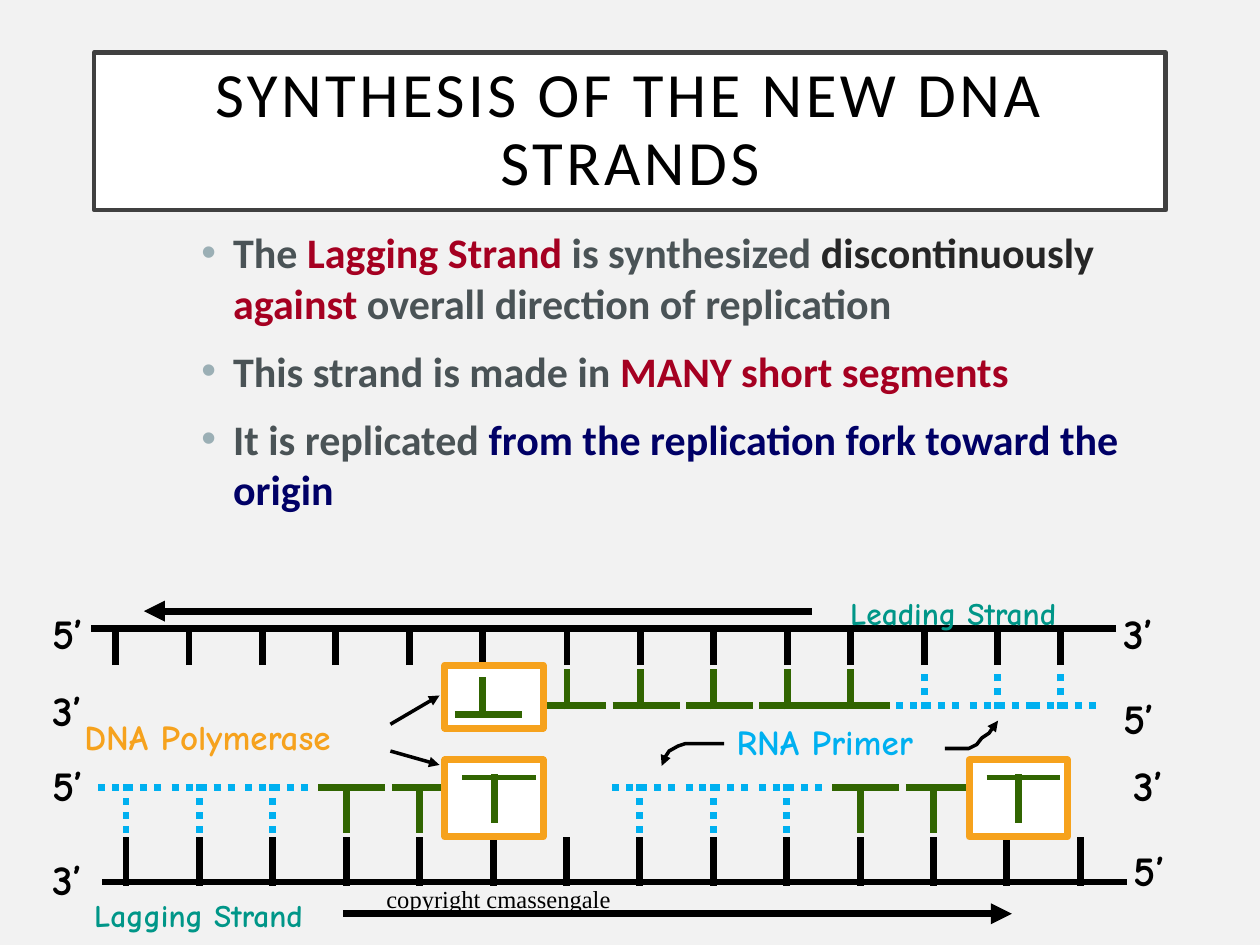
from lxml.etree import SubElement
from pptx import Presentation
from pptx.dml.color import RGBColor
from pptx.enum.dml import MSO_LINE
from pptx.enum.shapes import MSO_CONNECTOR, MSO_SHAPE
from pptx.enum.text import MSO_ANCHOR, MSO_AUTO_SIZE, PP_ALIGN
from pptx.oxml.ns import qn
from pptx.util import Cm, Pt

COLORS = {
    "background": "F2F2F2", "white": "FFFFFF", "black": "000000",
    "frame": "404040", "body": "4A5356", "bullet": "9BAFB5",
    "red": "A50021", "dark": "262626", "navy": "000066",
    "primer": "00B0F0", "new_strand": "316501",
    "polymerase": "F6A21D", "strand_label": "009688",
}
STEP = 1.48
TITLE = "SYNTHESIS OF THE NEW DNA STRANDS"
BULLETS = [
    [("The ", "body"), ("Lagging Strand", "red"), (" is synthesized ", "body"),
     ("discontinuously ", "dark"), ("against", "red"),
     (" overall direction of replication", "body")],
    [("This strand is made in ", "body"), ("MANY short segments", "red")],
    [("It is replicated ", "body"),
     ("from the replication fork toward the origin", "navy")],
]


def color(name):
    return RGBColor.from_string(COLORS[name])


def format_run(run, font, size, color_name, bold=False):
    run.font.name = font
    run.font.size = Pt(size)
    run.font.bold = bold
    run.font.color.rgb = color(color_name)


def format_line(shape, color_name, width, dash=None, arrow=None):
    shape.line.color.rgb = color(color_name)
    shape.line.width = Pt(width)
    if dash:
        shape.line.dash_style = dash
    if arrow:
        SubElement(shape._element.spPr.find(qn("a:ln")), qn(f"a:{arrow}End"), type="triangle")


def add_line(shapes, start, end, color_name="black", width=4, dash=None, arrow=None):
    points = [Cm(value) for value in (*start, *end)]
    connector = shapes.add_connector(MSO_CONNECTOR.STRAIGHT, *points)
    format_line(connector, color_name, width, dash, arrow)
    SubElement(connector._element.spPr, qn("a:effectLst"))


def add_curve(shapes, points, arrow):
    (start_x, start_y), *rest = [(Cm(x), Cm(y)) for x, y in points]
    builder = shapes.build_freeform(start_x, start_y)
    builder.add_line_segments(rest, close=False)
    curve = builder.convert_to_shape()
    curve.shadow.inherit = False
    curve.fill.background()
    format_line(curve, "black", 2, arrow=arrow)


def add_box(shapes, left, top, width, height, line_color, line_width):
    box = shapes.add_shape(MSO_SHAPE.RECTANGLE, Cm(left), Cm(top), Cm(width), Cm(height))
    box.shadow.inherit = False
    box.fill.solid()
    box.fill.fore_color.rgb = color("white")
    format_line(box, line_color, line_width)
    return box


def add_label(shapes, text, left, top, width, height, size, color_name):
    label = shapes.add_textbox(Cm(left), Cm(top), Cm(width), Cm(height))
    label.text_frame.text = text
    label.text_frame.word_wrap = False
    label.text_frame.auto_size = MSO_AUTO_SIZE.SHAPE_TO_FIT_TEXT
    format_run(label.text_frame.paragraphs[0].runs[0], "Comic Neue", size, color_name, True)


def add_end_label(shapes, text, left, top):
    add_label(shapes, text, left, top, 1.22, 1.27, 24, "black")


def add_ticks(shapes, positions, top, bottom):
    for x in positions:
        add_line(shapes, (x, bottom), (x, top))


def add_nucleotides(shapes, positions, top, bottom, bar, color_name, dash=None):
    for x in positions:
        add_line(shapes, (x, bottom), (x, top), color_name, dash=dash)
        add_line(shapes, (x - 0.56, bar), (x + 0.79, bar), color_name, dash=dash)


def add_title(shapes):
    box = add_box(shapes, 1.9, 1.06, 21.6, 3.18, "frame", 2.5)
    frame = box.text_frame
    frame.text = TITLE
    frame.word_wrap = True
    frame.vertical_anchor = MSO_ANCHOR.MIDDLE
    paragraph = frame.paragraphs[0]
    paragraph.alignment = PP_ALIGN.CENTER
    paragraph.line_spacing = 0.9
    run = paragraph.runs[0]
    format_run(run, "Calibri", 36, "black")
    run.font._element.set("spc", "200")


def add_bullet(paragraph):
    properties = paragraph._p.get_or_add_pPr()
    properties.set("marL", str(Cm(0.64)))
    properties.set("indent", str(-Cm(0.64)))
    bullet_color = SubElement(properties, qn("a:buClr"))
    SubElement(bullet_color, qn("a:srgbClr"), val=COLORS["bullet"])
    SubElement(properties, qn("a:buFont"), typeface="Arial")
    SubElement(properties, qn("a:buChar"), char="•")


def add_body(shapes):
    frame = shapes.add_textbox(Cm(3.81), Cm(4.45), Cm(20.52), Cm(11.43)).text_frame
    frame.word_wrap = True
    for index, parts in enumerate(BULLETS):
        paragraph = frame.add_paragraph() if index else frame.paragraphs[0]
        paragraph.space_before = Pt(10)
        add_bullet(paragraph)
        for text, color_name in parts:
            run = paragraph.add_run()
            run.text = text
            format_run(run, "Calibri", 24, color_name, True)


def add_leading_strand(shapes):
    ticks = [start + STEP * index
             for start, count in ((2.33, 6), (11.43, 4), (17.15, 3), (21.38, 1))
             for index in range(count)]
    add_line(shapes, (22.5, 12.67), (1.83, 12.67))
    add_ticks(shapes, ticks, 12.6, 13.41)
    add_line(shapes, (16.36, 12.32), (2.9, 12.32), arrow="tail")
    add_label(shapes, "Leading Strand", 16.89, 11.86, 5.16, 1.02, 18, "strand_label")
    add_nucleotides(shapes, ticks[6:11], 13.49, 14.3, 14.22, "new_strand")
    add_nucleotides(shapes, ticks[11:], 13.49, 14.3, 14.22, "primer", MSO_LINE.ROUND_DOT)
    add_box(shapes, 8.97, 13.41, 1.98, 1.27, "polymerase", 4)
    add_nucleotides(shapes, ticks[5:6], 13.64, 14.45, 14.4, "new_strand")
    for text, left, top in (("5’", 0.81, 12.12), ("3’", 22.4, 12.12),
                            ("3’", 0.81, 13.67), ("5’", 22.4, 13.84)):
        add_end_label(shapes, text, left, top)


def add_lagging_strand(shapes):
    ticks = [2.54 + STEP * index for index in range(14)]
    add_line(shapes, (22.71, 17.78), (2.06, 17.78))
    add_ticks(shapes, ticks, 16.87, 17.86)
    add_line(shapes, (20.4, 18.42), (6.91, 18.42), arrow="head")
    add_label(shapes, "Lagging Strand", 1.65, 17.93, 5.11, 1.02, 18, "strand_label")
    for first in (0, 7):
        primers, bases = ticks[first:first + 3], ticks[first + 3:first + 5]
        add_nucleotides(shapes, primers, 15.8, 16.79, 15.88, "primer", MSO_LINE.ROUND_DOT)
        add_nucleotides(shapes, bases, 15.8, 16.79, 15.88, "new_strand")
        left = 8.97 + STEP * first * 1.02
        stem = left + 0.99
        add_box(shapes, left, 15.32, 1.98, 1.55, "polymerase", 4)
        add_line(shapes, (stem, 16.59), (stem, 15.6), "new_strand")
        add_line(shapes, (left + 0.35, 15.67), (left + 1.84, 15.67), "new_strand", 3)
    for text, left, top in (("5’", 0.81, 15.19), ("3’", 22.61, 15.19),
                            ("3’", 0.81, 17.09), ("5’", 22.61, 16.89)):
        add_end_label(shapes, text, left, top)


def add_callouts(shapes):
    add_label(shapes, "DNA Polymerase", 1.45, 14.3, 6.15, 1.09, 20, "polymerase")
    add_label(shapes, "RNA Primer", 14.6, 14.4, 4.55, 1.09, 20, "primer")
    add_line(shapes, (7.87, 14.6), (8.86, 14.02), width=2, arrow="tail")
    add_line(shapes, (7.87, 15.14), (8.86, 15.42), width=2, arrow="tail")
    add_curve(shapes, [(19.05, 15.09), (19.53, 15.09), (19.69, 15.01), (19.79, 14.88),
                       (19.94, 14.78), (20.02, 14.66), (20.12, 14.53)], "tail")
    add_curve(shapes, [(13.34, 15.44), (13.39, 15.29), (13.49, 15.14), (13.67, 15.04),
                       (13.82, 14.99), (14.6, 14.99)], "head")


def add_footer(shapes):
    frame = shapes.add_textbox(Cm(7.54), Cm(17.68), Cm(12.65), Cm(0.89)).text_frame
    frame.text = "copyright cmassengale"
    frame.word_wrap = True
    frame.vertical_anchor = MSO_ANCHOR.MIDDLE
    format_run(frame.paragraphs[0].runs[0], "Times New Roman", 14, "black")


def main():
    presentation = Presentation()
    presentation.slide_width, presentation.slide_height = Cm(25.4), Cm(19.05)
    slide = presentation.slides.add_slide(presentation.slide_layouts[6])
    slide.background.fill.solid()
    slide.background.fill.fore_color.rgb = color("background")
    add_title(slide.shapes)
    add_body(slide.shapes)
    for add_part in (add_leading_strand, add_lagging_strand, add_callouts):
        add_part(slide.shapes.add_group_shape().shapes)
    add_footer(slide.shapes)
    presentation.save("out.pptx")


if __name__ == "__main__":
    main()
